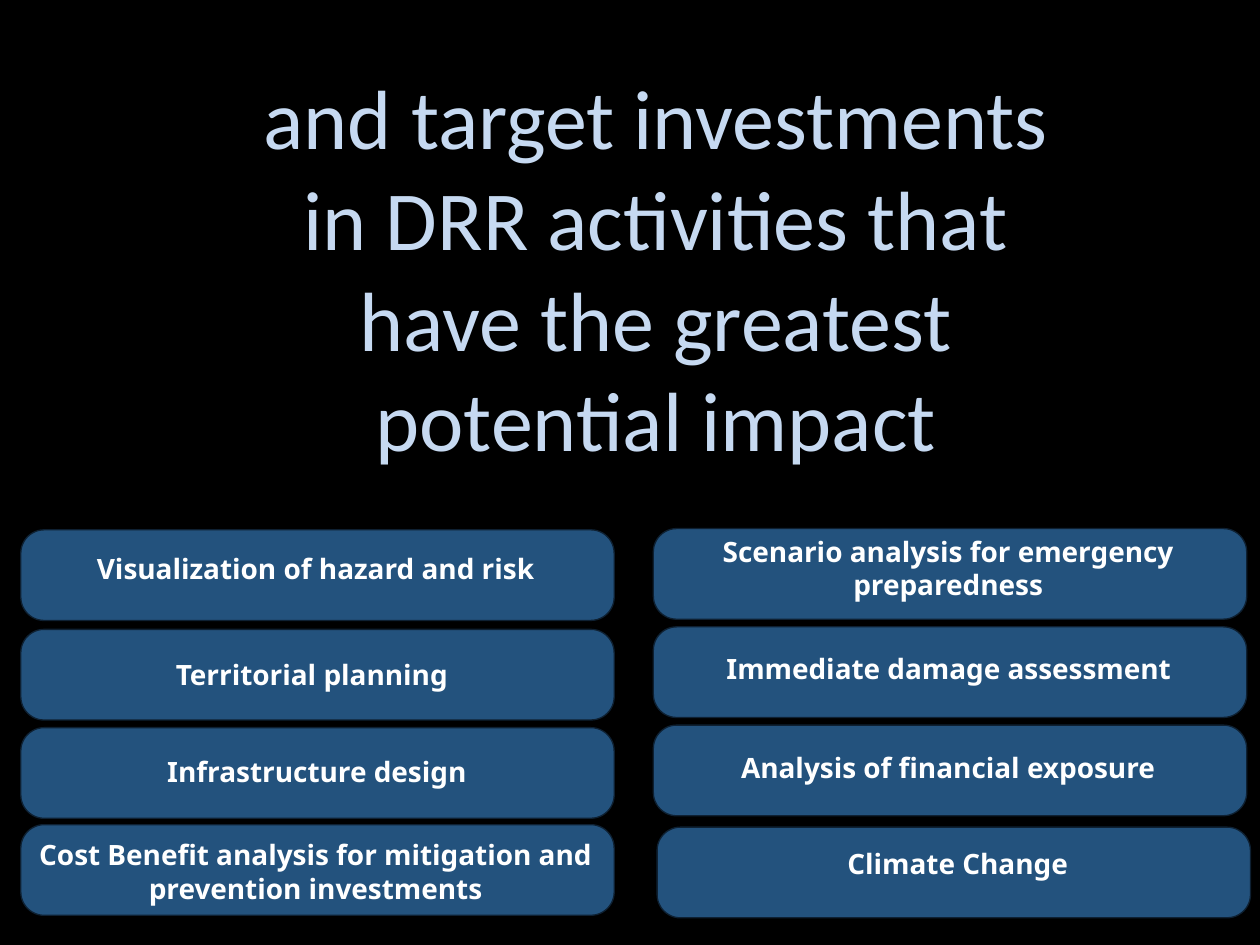
from pptx import Presentation, util as u
from pptx.dml.color import RGBColor
from pptx.enum import shapes, text
from pptx.oxml import ns
from lxml import etree

COLORS = {"back": "000000", "title": "C6D9F1", "panel": "3B8AD1", "label": "FFFFFF"}
PANEL_SIZE = (4.72, 0.73)
USES = [
    ("Visualization of hazard and risk", (0.16, 4.2), (0.1, 4.38, 4.81, 0.62)),
    ("Territorial planning", (0.16, 4.99), (1.34, 5.22, 2.27, 0.27)),
    ("Infrastructure design", (0.16, 5.77), (0.47, 5.99, 4.09, 0.36)),
    ("Cost Benefit analysis for mitigation and prevention investments",
     (0.16, 6.54), (0.15, 6.65, 4.71, 0.69)),
    ("Scenario analysis for emergency preparedness",
     (5.18, 4.19), (5.37, 4.24, 4.31, 0.62)),
    ("Immediate damage assessment", (5.18, 4.97), (5.17, 5.17, 4.72, 0.36)),
    ("Analysis of financial exposure", (5.18, 5.75), (5.79, 5.96, 3.47, 0.27)),
    ("Climate Change", (5.21, 6.56), (6.59, 6.72, 2.02, 0.27)),
]


def color(name):
    """Return the named colour."""
    return RGBColor.from_string(COLORS[name])


def inches(box):
    """Turn plain numbers into lengths."""
    return [u.Inches(value) for value in box]


def set_text(shape, words, size, font, name, bold, margin):
    """Write one centred, top-anchored paragraph into a shape."""
    frame = shape.text_frame
    frame.text = words
    frame.word_wrap = True
    frame.auto_size = text.MSO_AUTO_SIZE.NONE
    frame.vertical_anchor = text.MSO_ANCHOR.TOP
    frame.margin_left = frame.margin_right = u.Inches(margin[0])
    frame.margin_top = frame.margin_bottom = u.Inches(margin[1])
    para = frame.paragraphs[0]
    para.alignment = text.PP_ALIGN.CENTER
    span = para.runs[0].font
    span.size, span.name, span.bold = u.Pt(size), font, bold
    span.color.rgb = color(name)


def add_title(page, box):
    """Place the headline in the title placeholder."""
    title = page.shapes.title
    title.left, title.top, title.width, title.height = inches(box)
    set_text(title, "and target investments in DRR activities that have "
             "the greatest potential impact", 48, "Calibri", "title", False, (0.15, 0.05))


def set_opacity(fill_parent, percent):
    """Make the solid fill inside an element partly transparent."""
    tone = fill_parent.find(ns.qn("a:solidFill")).find(ns.qn("a:srgbClr"))
    etree.SubElement(tone, ns.qn("a:alpha"), val=str(percent * 1000))


def add_panel(page, box):
    """Draw one translucent rounded panel."""
    panel = page.shapes.add_shape(shapes.MSO_SHAPE.ROUNDED_RECTANGLE, *inches(box))
    panel.adjustments[0] = 0.26
    panel.shadow.inherit = False
    panel.fill.solid()
    panel.fill.fore_color.rgb = color("panel")
    panel.line.color.rgb = color("back")
    panel.line.width = u.Pt(1.5)
    properties = panel.element.spPr
    set_opacity(properties, 60)
    set_opacity(properties.find(ns.qn("a:ln")), 60)


def add_label(page, words, box):
    """Place the wording of one panel."""
    label = page.shapes.add_textbox(*inches(box))
    set_text(label, words, 16, "Noto Sans", "label", True, (0, 0))


def main():
    """Build the deck."""
    deck = Presentation()
    deck.slide_width, deck.slide_height = inches((10, 7.5))
    page = deck.slides.add_slide(deck.slide_layouts[5])
    page.background.fill.solid()
    page.background.fill.fore_color.rgb = color("back")
    add_title(page, (1.67, 0.47, 7.07, 3.19))
    for words, corner, label_box in USES:
        add_panel(page, corner + PANEL_SIZE)
        add_label(page, words, label_box)
    deck.save("out.pptx")


if __name__ == "__main__":
    main()
